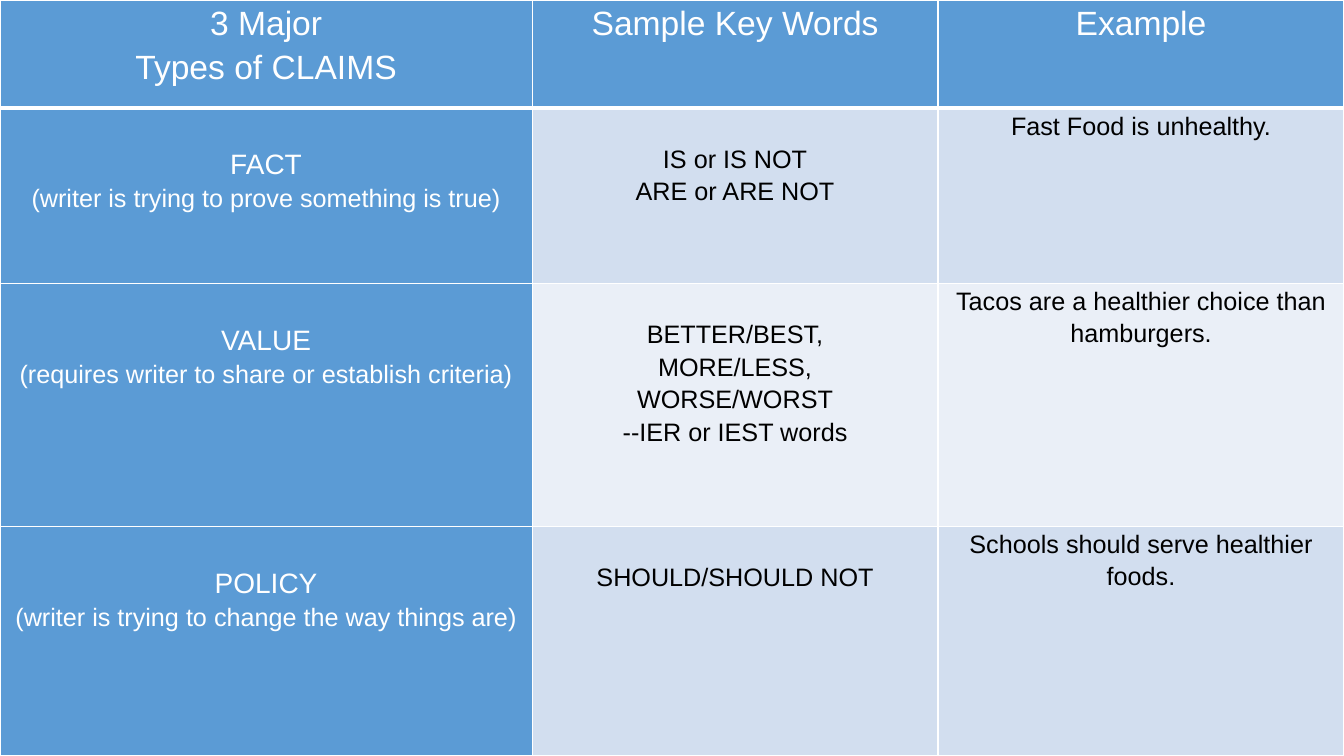
from pptx import Presentation
from pptx.dml.color import RGBColor
from pptx.enum.text import MSO_ANCHOR, PP_ALIGN
from pptx.oxml import parse_xml
from pptx.oxml.ns import nsdecls
from pptx.util import Cm, Pt

HEADINGS = (["3 Major", "Types of CLAIMS"], ["Sample Key Words"], ["Example"])
CLAIMS = [
    (["FACT", "(writer is trying to prove something is true)"],
     ["IS or IS NOT", "ARE or ARE NOT"],
     ["Fast Food is unhealthy."]),
    (["VALUE", "(requires writer to share or establish criteria)"],
     ["BETTER/BEST,", "MORE/LESS,", "WORSE/WORST", "--IER or IEST words"],
     ["Tacos are a healthier choice than hamburgers."]),
    (["POLICY", "(writer is trying to change the way things are)"],
     ["SHOULD/SHOULD NOT"],
     ["Schools should serve healthier foods."]),
]

WIDTH, HEIGHT = Cm(33.87), Cm(19.05)
COLUMN_WIDTHS = (Cm(13.41), Cm(10.23), Cm(10.23))
ROW_HEIGHTS = (Cm(2.72), Cm(4.42), Cm(6.12), Cm(5.79))
SIDE_MARGIN = Cm(0.18)
TOP_MARGINS = (Cm(0.93), Cm(0.84), Cm(0))  # one text line above claims and key words

FONT = "Arial"
LINE_SPACING = 1.15
HEADING_SIZE, CLAIM_SIZE, BODY_SIZE = 24, 20, 18
THIN, THICK = Pt(1), Pt(3)

WHITE = RGBColor(0xFF, 0xFF, 0xFF)
BLACK = RGBColor(0x00, 0x00, 0x00)
BLUE = RGBColor(0x5B, 0x9B, 0xD5)
BANDS = (RGBColor(0xD2, 0xDE, 0xEF), RGBColor(0xEA, 0xEF, 0xF7))

CENTER = PP_ALIGN.CENTER
TOP = MSO_ANCHOR.TOP


def set_borders(cell, top, bottom):
    properties = cell._tc.get_or_add_tcPr()
    for side, width in (("L", THIN), ("R", THIN), ("T", top), ("B", bottom)):
        properties.append(parse_xml(
            f'<a:ln{side} {nsdecls("a")} w="{width}"><a:solidFill>'
            f'<a:srgbClr val="{WHITE}"/></a:solidFill></a:ln{side}>'))


def write_cell(cell, lines, *, sizes, color, fill, top_margin=0):
    """Write one paragraph per line; the last size serves all further lines."""
    cell.margin_left = cell.margin_right = SIDE_MARGIN
    cell.margin_top, cell.margin_bottom = top_margin, 0
    cell.vertical_anchor = TOP
    cell.fill.solid()
    cell.fill.fore_color.rgb = fill
    frame = cell.text_frame
    frame.text = "\n".join(lines)
    for index, paragraph in enumerate(frame.paragraphs):
        paragraph.alignment = CENTER
        paragraph.line_spacing = LINE_SPACING
        font = paragraph.runs[0].font
        font.name, font.bold = FONT, False
        font.size = Pt(sizes[min(index, len(sizes) - 1)])
        font.color.rgb = color


def main():
    presentation = Presentation()
    presentation.slide_width, presentation.slide_height = WIDTH, HEIGHT
    slide = presentation.slides.add_slide(presentation.slide_layouts[6])
    rows = [HEADINGS, *CLAIMS]
    table = slide.shapes.add_table(
        len(rows), len(HEADINGS), 0, 0, WIDTH, HEIGHT).table
    for column, width in zip(table.columns, COLUMN_WIDTHS):
        column.width = width
    for row, height in zip(table.rows, ROW_HEIGHTS):
        row.height = height

    for row_index, row in enumerate(rows):
        for column_index, lines in enumerate(row):
            cell = table.cell(row_index, column_index)
            set_borders(cell, top=THICK if row_index == 1 else THIN,
                        bottom=THICK if row_index == 0 else THIN)
            if row_index == 0:
                write_cell(cell, lines, sizes=[HEADING_SIZE], color=WHITE, fill=BLUE)
            elif column_index == 0:
                write_cell(cell, lines, sizes=[CLAIM_SIZE, BODY_SIZE], color=WHITE,
                           fill=BLUE, top_margin=TOP_MARGINS[column_index])
            else:
                write_cell(cell, lines, sizes=[BODY_SIZE], color=BLACK,
                           fill=BANDS[(row_index - 1) % 2],
                           top_margin=TOP_MARGINS[column_index])
    presentation.save("out.pptx")


if __name__ == "__main__":
    main()
